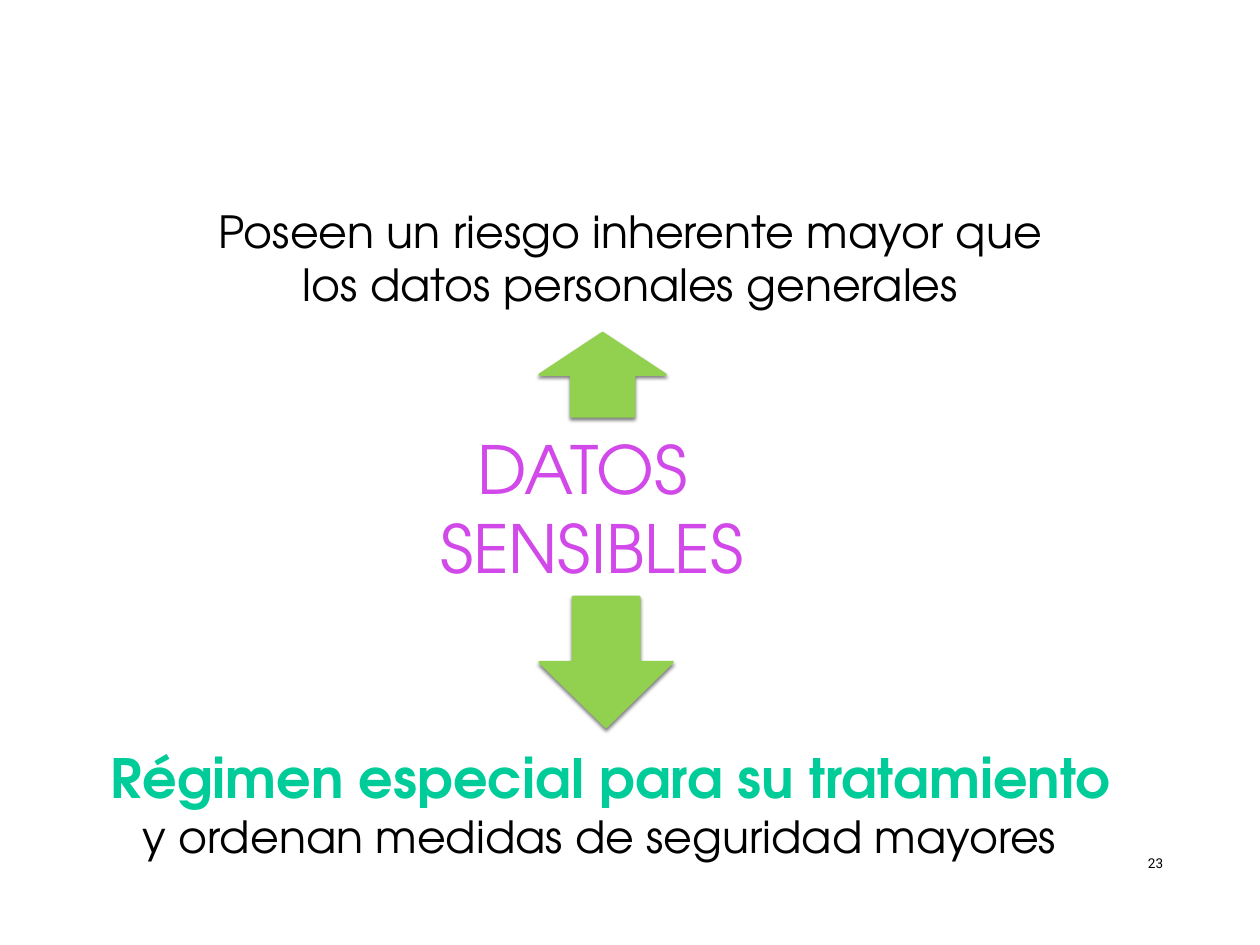
from lxml import etree
from pptx import Presentation
from pptx.dml.color import RGBColor
from pptx.enum.shapes import MSO_SHAPE
from pptx.enum.text import MSO_ANCHOR, MSO_AUTO_SIZE, PP_ALIGN
from pptx.oxml.ns import qn
from pptx.util import Cm, Pt

UP_ARROW = MSO_SHAPE.UP_ARROW
DOWN_ARROW = MSO_SHAPE.DOWN_ARROW
TOP = MSO_ANCHOR.TOP
NO_FIT = MSO_AUTO_SIZE.NONE
CENTER = PP_ALIGN.CENTER
LEFT = PP_ALIGN.LEFT

TITLE_ONLY = 5
BLACK, GREEN, TEAL, VIOLET = "000000", "92D050", "00CC99", "D249E9"
DISPLAY, PLAIN = "TeX Gyre Adventor", "Roboto"


def color(code):
    return RGBColor.from_string(code)


class SlideBuilder:
    def __init__(self, page):
        self.page = page

    def fill_text(self, box, paragraphs, align):
        frame = box.text_frame
        frame.word_wrap = True
        frame.auto_size = NO_FIT
        frame.vertical_anchor = TOP
        for index, runs in enumerate(paragraphs):
            para = frame.add_paragraph() if index else frame.paragraphs[0]
            para.alignment = align
            for text, size, face, code, bold in runs:
                span = para.add_run()
                span.text = text
                span.font.size = Pt(size)
                span.font.name = face
                span.font.bold = bold
                span.font.color.rgb = color(code)

    def title(self, left, top, width, height, paragraphs):
        box = self.page.shapes.title
        box.left, box.top = Cm(left), Cm(top)
        box.width, box.height = Cm(width), Cm(height)
        self.fill_text(box, paragraphs, CENTER)

    def text(self, left, top, width, height, paragraphs, align=CENTER):
        box = self.page.shapes.add_textbox(Cm(left), Cm(top), Cm(width), Cm(height))
        self.fill_text(box, paragraphs, align)

    def arrow(self, kind, left, top, width, height):
        arrow = self.page.shapes.add_shape(kind, Cm(left), Cm(top), Cm(width), Cm(height))
        arrow.fill.solid()
        arrow.fill.fore_color.rgb = color(GREEN)
        arrow.line.color.rgb = color(GREEN)
        arrow.line.width = Pt(2)
        arrow.shadow.inherit = False
        effects = arrow._element.spPr.find(qn("a:effectLst"))
        shadow = etree.SubElement(
            effects, qn("a:outerShdw"), blurRad=str(Pt(3)), dist=str(Pt(2)),
            dir="5400000", rotWithShape="0")
        tint = etree.SubElement(shadow, qn("a:srgbClr"), val=BLACK)
        etree.SubElement(tint, qn("a:alpha"), val="50000")


def main():
    deck = Presentation()
    deck.slide_width, deck.slide_height = Cm(36.12), Cm(27.1)
    page = deck.slides.add_slide(deck.slide_layouts[TITLE_ONLY])
    builder = SlideBuilder(page)

    builder.title(7.26, 12.14, 19.41, 4.88, [
        [("DATOS ", 54, DISPLAY, VIOLET, False)],
        [("SENSIBLES", 54, DISPLAY, VIOLET, False)],
    ])
    builder.text(5.77, 5.74, 24.61, 3.33, [[
        ("Poseen un riesgo inherente mayor que los datos personales generales",
         36, DISPLAY, BLACK, False),
    ]])
    builder.text(2.57, 21.23, 29.59, 3.68, [[
        (" ", 36, PLAIN, BLACK, False),
        ("Régimen especial para su tratamiento ", 44, DISPLAY, TEAL, True),
        ("y ordenan medidas de seguridad mayores ", 36, DISPLAY, BLACK, False),
    ]])
    builder.arrow(UP_ARROW, 15.47, 9.55, 3.61, 2.39)
    builder.arrow(DOWN_ARROW, 15.47, 17.12, 3.81, 3.73)
    builder.text(32.66, 24.38, 2.59, 0.74, [[("23", 11, PLAIN, BLACK, False)]], LEFT)

    deck.save("out.pptx")


if __name__ == "__main__":
    main()
